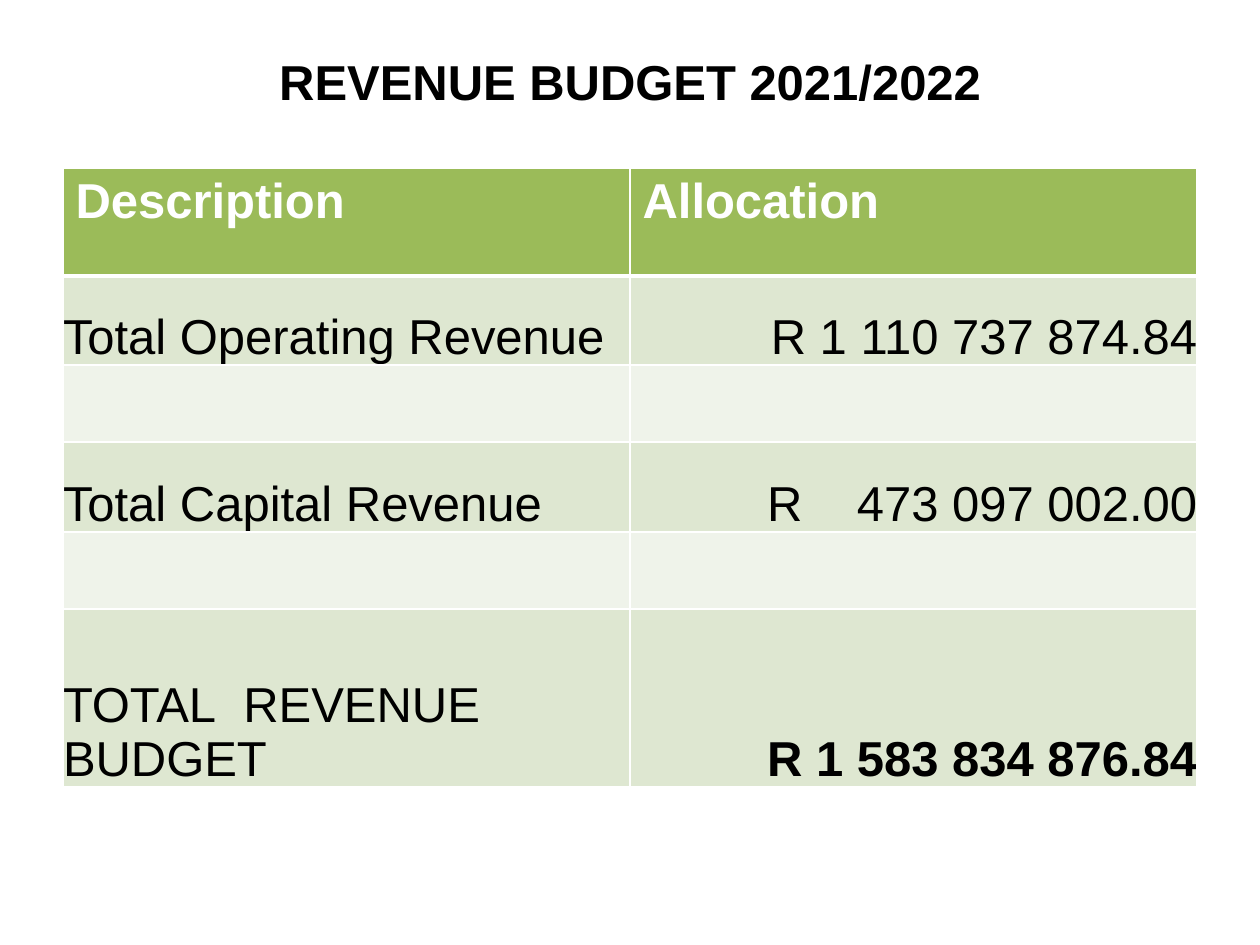
from dataclasses import dataclass

from pptx import Presentation
from pptx.dml.color import RGBColor as RGB
from pptx.enum.text import MSO_ANCHOR as ANCHOR, PP_ALIGN as ALIGN
from pptx.oxml.ns import qn
from pptx.util import Pt
from lxml.etree import SubElement


@dataclass(frozen=True)
class Theme:
    font: str = "Arial"
    size: int = 28
    space: float = 7.78
    ink: str = "000000"
    paper: str = "FFFFFF"
    header: str = "9BBB59"
    bands: tuple = ("DEE7D1", "EFF3EA")


THEME = Theme()
ROW_HEIGHTS = (108, 89, 77, 90, 77, 178)
HEADINGS = ("Description", "Allocation")
BUDGET = (
    (("Total Operating Revenue",), ("R 1 110 737 874.84",), 1),
    ((), (), 1),
    (("Total Capital Revenue",), ("R", "473 097 002.00"), 4),
    ((), (), 1),
    (("TOTAL", "REVENUE BUDGET"), ("R 1 583 834 876.84",), 2),
)


def px(n):
    return round(n * 914400 / 126)


def set_font(p, color, bold):
    f = p.font
    f.name, f.size, f.bold = THEME.font, Pt(THEME.size), bold
    f.color.rgb = RGB.from_string(color)


def add_parts(p, parts, spaces):
    for i, part in enumerate(parts):
        if i:
            r = p.add_run()
            r.text = " "
            extra = round((spaces - 1) * THEME.space * 100)
            r.font._element.set("spc", str(extra))
        p.add_run().text = part


def set_borders(cell, bottom):
    tcPr = cell._tc.get_or_add_tcPr()
    widths = {"a:lnL": 1, "a:lnR": 1, "a:lnT": 1, "a:lnB": bottom}
    for i, (tag, width) in enumerate(widths.items()):
        ln = SubElement(tcPr, qn(tag), w=str(Pt(width)))
        tcPr.insert(i, ln)
        fill = SubElement(ln, qn("a:solidFill"))
        SubElement(fill, qn("a:srgbClr"), val=THEME.paper)


def style_cell(cell, fill, bottom=1):
    cell.fill.solid()
    cell.fill.fore_color.rgb = RGB.from_string(fill)
    set_borders(cell, bottom)


def add_title(s, x, y, w, h):
    sp = s.shapes.title
    sp.left, sp.top, sp.width, sp.height = map(px, (x, y, w, h))
    tf = sp.text_frame
    tf.word_wrap = True
    tf.vertical_anchor = ANCHOR.TOP
    tf.margin_top = px(13)
    p = tf.paragraphs[0]
    p.text = "REVENUE BUDGET 2021/2022"
    p.alignment = ALIGN.CENTER
    set_font(p, THEME.ink, True)


def add_budget_table(s, x, y, w):
    frame = s.shapes.add_table(len(ROW_HEIGHTS), len(HEADINGS),
                               *map(px, (x, y, w, sum(ROW_HEIGHTS))))
    table = frame.table
    for col in table.columns:
        col.width = px(w / len(HEADINGS))
    for row, height in zip(table.rows, ROW_HEIGHTS):
        row.height = px(height)
    for c, heading in enumerate(HEADINGS):
        cell = table.cell(0, c)
        style_cell(cell, THEME.header, bottom=3)
        p = cell.text_frame.paragraphs[0]
        p.text = heading
        set_font(p, THEME.paper, True)
    for r, (label, amount, spaces) in enumerate(BUDGET, 1):
        for c, parts in enumerate((label, amount)):
            cell = table.cell(r, c)
            style_cell(cell, THEME.bands[(r - 1) % 2])
            if not parts:
                continue
            cell.vertical_anchor = ANCHOR.BOTTOM
            cell.margin_left = cell.margin_right = 0
            cell.margin_top = cell.margin_bottom = 0
            p = cell.text_frame.paragraphs[0]
            p.alignment = ALIGN.RIGHT if c else ALIGN.LEFT
            add_parts(p, parts, spaces)
            set_font(p, THEME.ink, c == 1 and r == len(BUDGET))


def main():
    prs = Presentation()
    prs.slide_width, prs.slide_height = px(1260), px(945)
    s = prs.slides.add_slide(prs.slide_layouts[5])
    add_title(s, 63, 38, 1134, 110)
    add_budget_table(s, 63, 168, 1134)
    prs.save("out.pptx")


if __name__ == "__main__":
    main()
